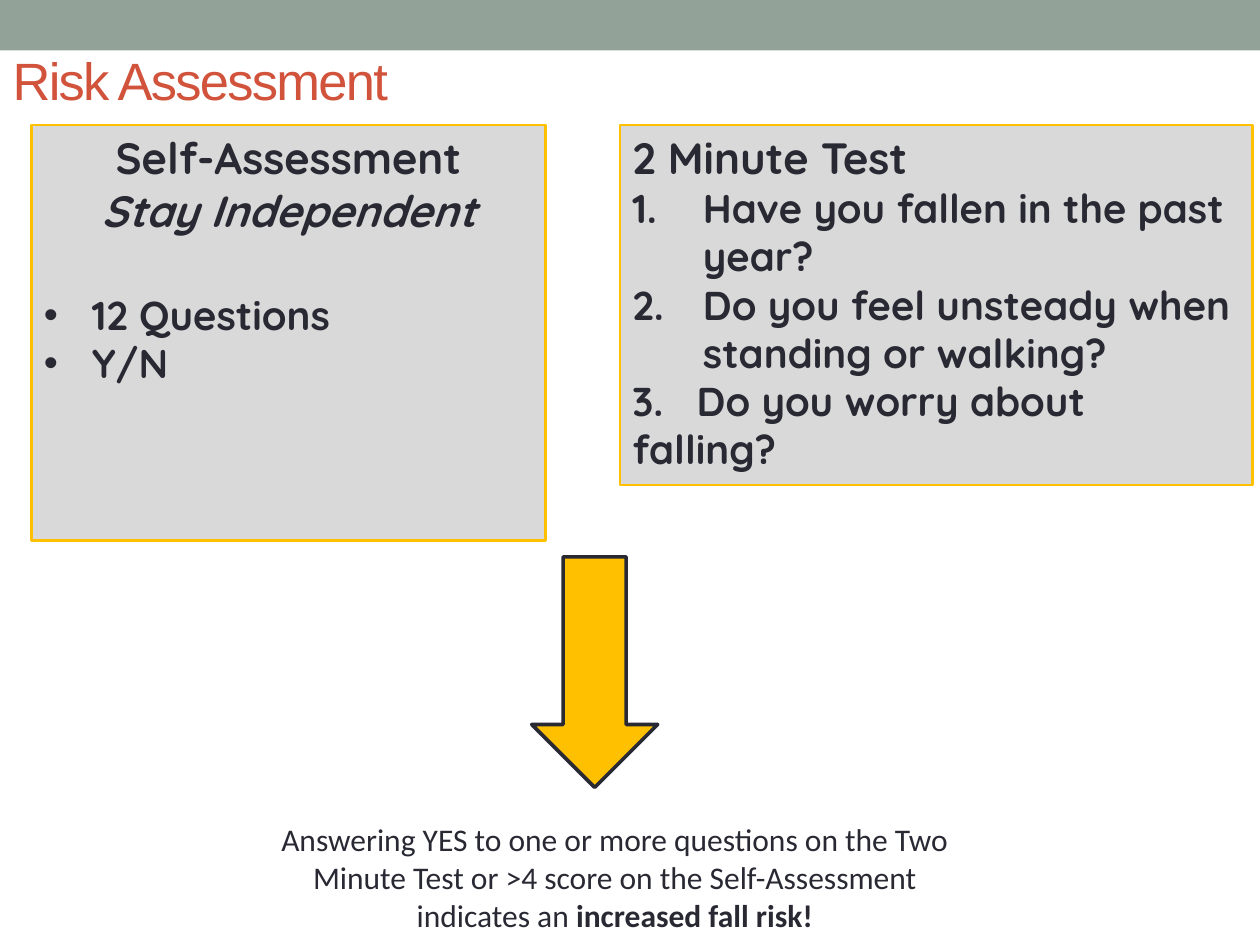
from pptx import Presentation
from pptx.dml.color import RGBColor
from pptx.enum.shapes import MSO_SHAPE
from pptx.enum.text import MSO_ANCHOR, PP_ALIGN
from pptx.oxml.xmlchemy import OxmlElement
from pptx.util import Inches, Pt

INK, GOLD, GREY = "292934", "FFC000", "D9D9D9"
HEAD = dict(name="Quicksand", size=Pt(25), bold=True)
ITEM = dict(HEAD, size=Pt(23))
NOTE = dict(name="Calibri", size=Pt(18), bold=False)


def color(code):
    return RGBColor.from_string(code)


def place(shape, box):
    for key, value in zip(("left", "top", "width", "height"), box):
        setattr(shape, key, Inches(value))


def style(run, form, code=INK):
    for key, value in form.items():
        setattr(run.font, key, value)
    run.font.color.rgb = color(code)


def child(parent, tag, **attrs):
    node = OxmlElement(tag)
    for key, value in attrs.items():
        node.set(key, str(value))
    parent.append(node)
    return node


def add_shape(slide, kind, box, fill, line=None, width=0):
    shape = slide.shapes.add_shape(kind, *map(Inches, box))
    shape.shadow.inherit = False
    shape.fill.solid()
    shape.fill.fore_color.rgb = color(fill)
    if line:
        shape.line.color.rgb = color(line)
        shape.line.width = Pt(width)
    else:
        shape.line.fill.background()
    return shape


def add_title(slide, text):
    title = slide.shapes.title
    place(title, (0, 0.17, 6.58, 0.92))
    frame = title.text_frame
    frame.vertical_anchor = MSO_ANCHOR.MIDDLE
    para = frame.paragraphs[0]
    para.alignment = PP_ALIGN.LEFT
    run = para.add_run()
    run.text = text
    style(run, dict(name="Arial", size=Pt(30)), "D2533C")
    run.font._element.set("spc", "-100")


def set_list(para, indent, tag, **attrs):
    props = para._p.get_or_add_pPr()
    props.set("marL", str(Inches(indent)))
    props.set("indent", str(-Inches(indent)))
    child(props, "a:buFont", typeface="Arial")
    child(props, tag, **attrs)


def set_tab(para, stop):
    tabs = child(para._p.get_or_add_pPr(), "a:tabLst")
    child(tabs, "a:tab", pos=Inches(stop), algn="l")


def fill_text(shape, lines, align):
    frame = shape.text_frame
    frame.word_wrap = True
    frame.vertical_anchor = MSO_ANCHOR.TOP
    paras = [frame.paragraphs[0]] + [frame.add_paragraph() for _ in lines[1:]]
    for para, runs in zip(paras, lines):
        para.alignment = align
        for text, form in runs:
            run = para.add_run()
            run.text = text
            style(run, form)
    return paras


def add_card(slide, box, lines, align=PP_ALIGN.LEFT):
    card = add_shape(slide, MSO_SHAPE.RECTANGLE, box, GREY, GOLD, 1.25)
    return fill_text(card, [[line] for line in lines], align)


def add_test(slide):
    paras = add_card(slide, (4.92, 0.99, 5.02, 2.86), [
        ("2 Minute Test", HEAD),
        ("Have you fallen in the past year?", ITEM),
        ("Do you feel unsteady when standing or walking?", ITEM),
        ("3.\tDo you worry about falling?", ITEM),
    ])
    for para in paras[1:3]:
        set_list(para, 0.56, "a:buAutoNum", type="arabicPeriod")
    set_tab(paras[3], 0.51)


def add_self(slide):
    paras = add_card(slide, (0.25, 0.99, 4.08, 3.3), [
        ("Self-Assessment", HEAD),
        ("Stay Independent", dict(HEAD, italic=True)),
        ("12 Questions", ITEM),
        ("Y/N", ITEM),
    ], PP_ALIGN.CENTER)
    paras[2].space_before = Pt(31)
    for para in paras[2:]:
        para.alignment = PP_ALIGN.LEFT
        set_list(para, 0.38, "a:buChar", char="•")


def add_note(slide):
    box = slide.shapes.add_textbox(*map(Inches, (1.92, 6.46, 5.92, 1.01)))
    fill_text(box, [[
        ("Answering YES to one or more questions on the Two Minute Test "
         "or >4 score on the Self-Assessment indicates an ", NOTE),
        ("increased fall risk!", dict(NOTE, bold=True)),
    ]], PP_ALIGN.CENTER)


def main():
    deck = Presentation()
    deck.slide_width, deck.slide_height = Inches(10), Inches(7.5)
    slide = deck.slides.add_slide(deck.slide_layouts[5])
    add_shape(slide, MSO_SHAPE.RECTANGLE, (0, 0, 10, 0.4), "93A299")
    add_title(slide, "Risk Assessment")
    add_test(slide)
    add_shape(slide, MSO_SHAPE.DOWN_ARROW, (4.22, 4.42, 1, 1.83), GOLD, INK, 2.08)
    add_note(slide)
    add_self(slide)
    deck.save("out.pptx")


if __name__ == "__main__":
    main()
